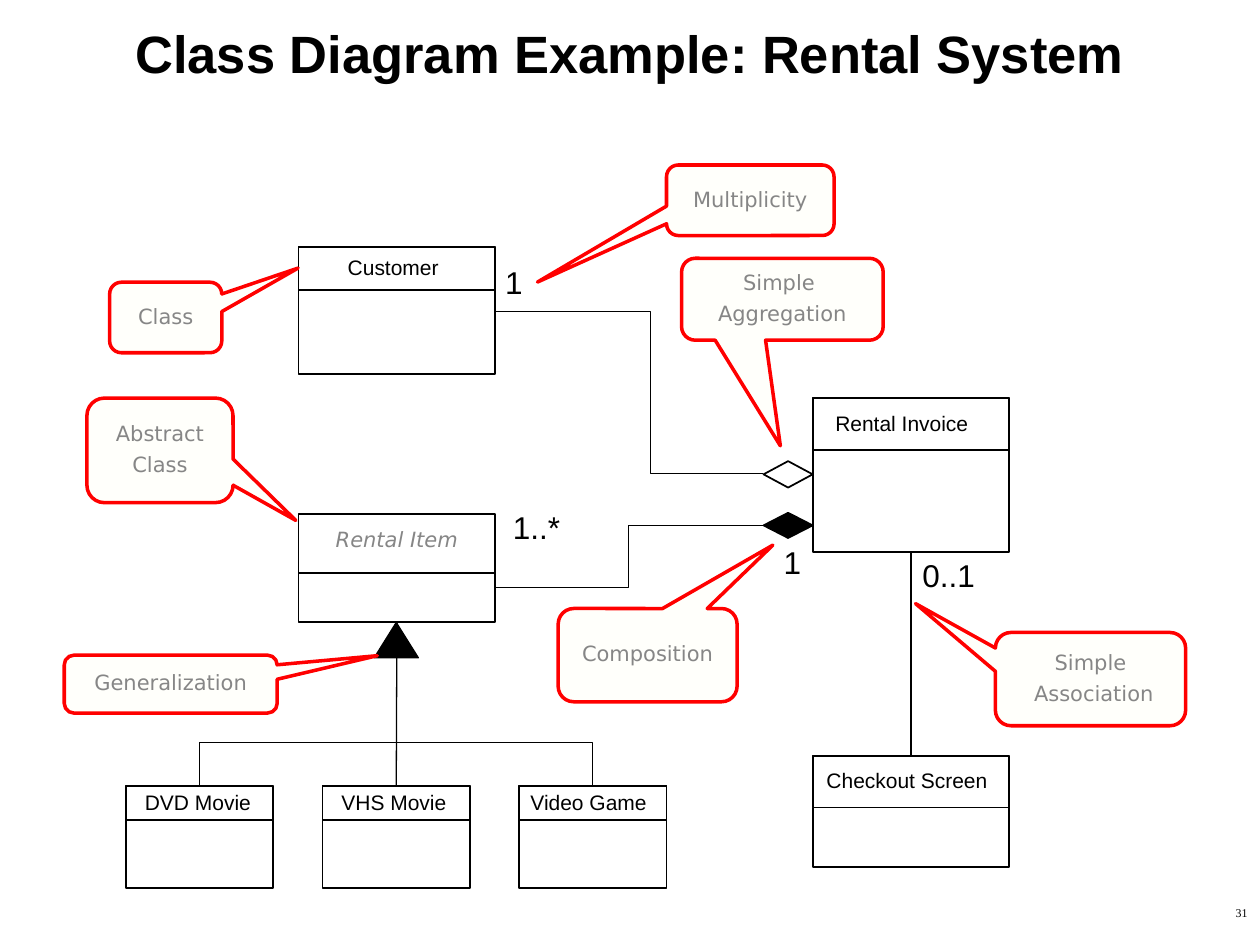
import pptx
import pptx.util
import pptx.dml.color
import pptx.enum.shapes
import pptx.enum.text
import pptx.oxml
import pptx.oxml.ns
import lxml.etree

Inches = pptx.util.Inches
Pt = pptx.util.Pt
Shape = pptx.enum.shapes.MSO_SHAPE
Link = pptx.enum.shapes.MSO_CONNECTOR
Align = pptx.enum.text.PP_ALIGN
Anchor = pptx.enum.text.MSO_ANCHOR
qn = pptx.oxml.ns.qn

COLORS = {"ink": "000000", "paper": "FFFFFF", "note": "FFFFFB",
          "edge": "FF0000", "gray": "868686"}
TITLE = {"name": "Arial", "size": Pt(30), "bold": True}
NAME = {"name": "Arial", "size": Pt(12)}
COUNT = {"name": "Arial", "size": Pt(18)}
PAGE = {"name": "Times New Roman", "size": Pt(6.8)}
NOTE = {"name": "DejaVu Sans", "size": Pt(12)}
ABSTRACT = {**NOTE, "italic": True}
TIGHT = {"margin_left": 0, "margin_top": 0, "margin_right": 0,
         "margin_bottom": 0, "word_wrap": False}
MIDDLE = {"vertical_anchor": Anchor.MIDDLE}
CENTER = {"alignment": Align.CENTER}
NOTE_PARA = {**CENTER, "line_spacing": 0.89, "space_before": Pt(4.8)}


def tint(key):
    return pptx.dml.color.RGBColor.from_string(COLORS[key])


def apply(item, style):
    for key, value in style.items():
        setattr(item, key, value)


def write(shape, lines, font, frame, para, color="ink"):
    text = shape.text_frame
    apply(text, frame)
    for i, line in enumerate(lines):
        part = text.add_paragraph() if i else text.paragraphs[0]
        apply(part, para)
        run = part.add_run()
        run.text = line
        apply(run.font, font)
        run.font.color.rgb = tint(color)


def label(slide, box, line, font, frame=TIGHT, para={}):
    shape = slide.shapes.add_textbox(*map(Inches, box))
    write(shape, [line], font, frame, para)


def paint(shape, fill, edge="ink", width=1):
    shape.shadow.inherit = False
    if fill:
        shape.fill.solid()
        shape.fill.fore_color.rgb = tint(fill)
    else:
        shape.fill.background()
    shape.line.color.rgb = tint(edge)
    shape.line.width = Pt(width)


def block(slide, kind, box, fill, edge="ink", width=1):
    shape = slide.shapes.add_shape(kind, *map(Inches, box))
    paint(shape, fill, edge, width)
    return shape


def entity(slide, box, head, name, pad):
    x, y, w, h = box
    body = block(slide, Shape.RECTANGLE, box, "paper")
    top = block(slide, Shape.RECTANGLE, (x, y, w, head), "paper")
    label(slide, (x + pad, y + (head - 0.22) / 2, w - 2 * pad, 0.22), name, NAME)
    return top, body


def abstract(slide, box, head, name):
    x, y, w, h = box
    body = block(slide, Shape.RECTANGLE, (x, y + 0.3, w, h - 0.3), "paper")
    top = block(slide, Shape.RECTANGLE, (x, y, w, head), "paper")
    write(top, [name], ABSTRACT, MIDDLE, {**CENTER, "line_spacing": 0.5}, "gray")
    return body


def diamond(slide, box, fill):
    x, y, w, h = box
    points = [(x + w / 2, y), (x + w, y + h / 2), (x + w / 2, y + h)]
    pen = slide.shapes.build_freeform(Inches(x), Inches(y + h / 2))
    pen.add_line_segments([tuple(map(Inches, p)) for p in points], close=True)
    paint(pen.convert_to_shape(), fill)


def callout(slide, box, tip, lines):
    shape = block(slide, Shape.ROUNDED_RECTANGULAR_CALLOUT, box, "note", "edge", 2)
    for i, value in enumerate((*tip, 0.167)):
        shape.adjustments[i] = value
    write(shape, lines, NOTE, {**MIDDLE, "word_wrap": False}, NOTE_PARA, "gray")


def wire(slide, kind, ends, width=0.75):
    line = slide.shapes.add_connector(kind, *map(Inches, ends))
    line.line.color.rgb = tint("ink")
    line.line.width = Pt(width)
    lxml.etree.SubElement(line._element.spPr, qn("a:effectLst"))
    return line


def elbow(slide, ends, bend, turn=0):
    props = wire(slide, Link.ELBOW, ends)._element.spPr
    guides = props.find(qn("a:prstGeom")).get_or_add_avLst()
    guide = lxml.etree.SubElement(guides, qn("a:gd"))
    guide.set("name", "adj1")
    guide.set("fmla", f"val {round(bend * 100000)}")
    if turn:
        props.find(qn("a:xfrm")).set("rot", str(turn * 60000))


def join(slide, ends, start, stop, width):
    line = wire(slide, Link.STRAIGHT, ends, width)
    line.begin_connect(start, 0)
    line.end_connect(stop, 2)


def tree(slide, box, names, parent):
    x, y, w, h = box
    step, wide = 1.56, 1.17
    heads = [entity(slide, (x + i * step, y, wide, h), 0.27, name, pad)[0]
             for i, (name, pad) in enumerate(names)]
    mid = x + step + wide / 2
    join(slide, (mid, y, mid, y - 1.3), heads[1], parent, 0.75)
    block(slide, Shape.FLOWCHART_EXTRACT, (mid - 0.175, y - 1.3, 0.35, 0.28), "ink", width=0.75)
    elbow(slide, (mid - 0.005, y + step, mid + 0.005, y - step), -35, 90)


def diagram(slide):
    entity(slide, (2.37, 1.96, 1.56, 1.01), 0.34, "Customer", 0.39)
    item = abstract(slide, (2.37, 4.08, 1.56, 0.86), 0.47, "Rental Item")
    invoice = entity(slide, (6.45, 3.16, 1.56, 1.22), 0.41, "Rental Invoice", 0.18)[1]
    screen = entity(slide, (6.45, 6, 1.56, 0.88), 0.41, "Checkout Screen", 0.11)[0]
    join(slide, (7.23, 6, 7.23, 4.38), screen, invoice, 1)
    tree(slide, (1, 6.24, 4.29, 0.81),
         [("DVD Movie", 0.15), ("VHS Movie", 0.15), ("Video Game", 0.09)], item)
    elbow(slide, (6.06, 4.17, 3.92, 4.66), 0.5)
    elbow(slide, (6.06, 3.76, 3.92, 2.47), 0.42)
    diamond(slide, (6.06, 3.66, 0.39, 0.21), None)
    diamond(slide, (6.06, 4.07, 0.39, 0.2), "ink")
    for x, y, w, count in [(4.01, 2.09, 0.15, "1"), (4.07, 4.03, 0.4, "1..*"),
                           (6.22, 4.31, 0.15, "1"), (7.32, 4.41, 0.44, "0..1")]:
        label(slide, (x, y, w, 0.33), count, COUNT)


def notes(slide):
    for box, tip, lines in [
        ((7.9, 5.02, 1.51, 0.74), (-0.92, -0.81), ["Simple", " Association"]),
        ((0.87, 2.24, 0.89, 0.56), (1.18, -0.7), ["Class"]),
        ((0.69, 3.16, 1.16, 0.83), (0.93, 0.67), ["Abstract", "Class"]),
        ((5.41, 2.05, 1.6, 0.65), (-0.01, 1.79), ["Simple ", "Aggregation"]),
        ((0.51, 5.2, 1.69, 0.46), (0.97, -0.49), ["Generalization"]),
        ((4.43, 4.83, 1.42, 0.74), (0.7, -1.18), ["Composition"]),
        ((5.29, 1.31, 1.33, 0.56), (-1.27, 1.16), ["Multiplicity"]),
    ]:
        callout(slide, box, tip, lines)


def main():
    deck = pptx.Presentation()
    deck.slide_width, deck.slide_height = Inches(10), Inches(7.5)
    slide = deck.slides.add_slide(deck.slide_layouts[6])
    label(slide, (0, 0, 10, 0.84), "Class Diagram Example: Rental System", TITLE,
          {**MIDDLE, "word_wrap": True}, CENTER)
    label(slide, (7.92, 7.14, 2.08, 0.36), "31", PAGE, {"word_wrap": True},
          {"alignment": Align.RIGHT, "space_before": Pt(3.4)})
    diagram(slide)
    notes(slide)
    deck.save("out.pptx")


if __name__ == "__main__":
    main()
